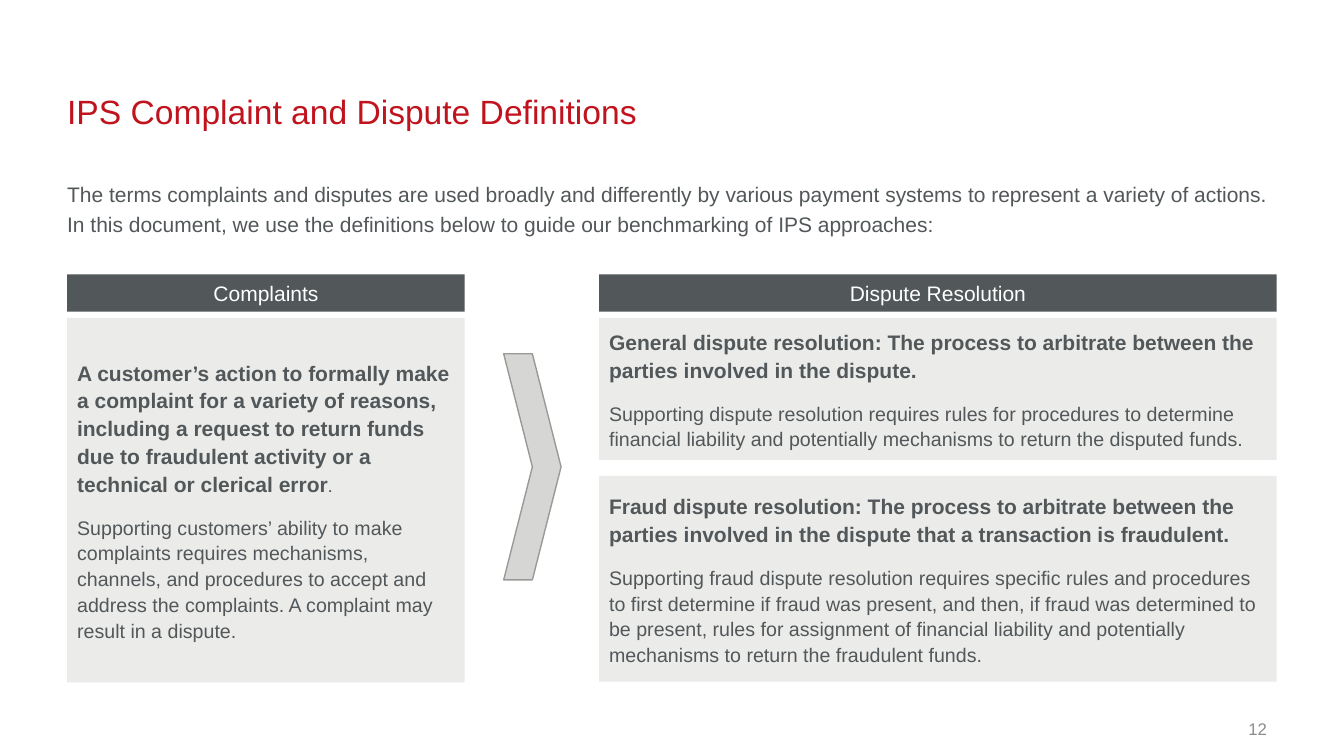
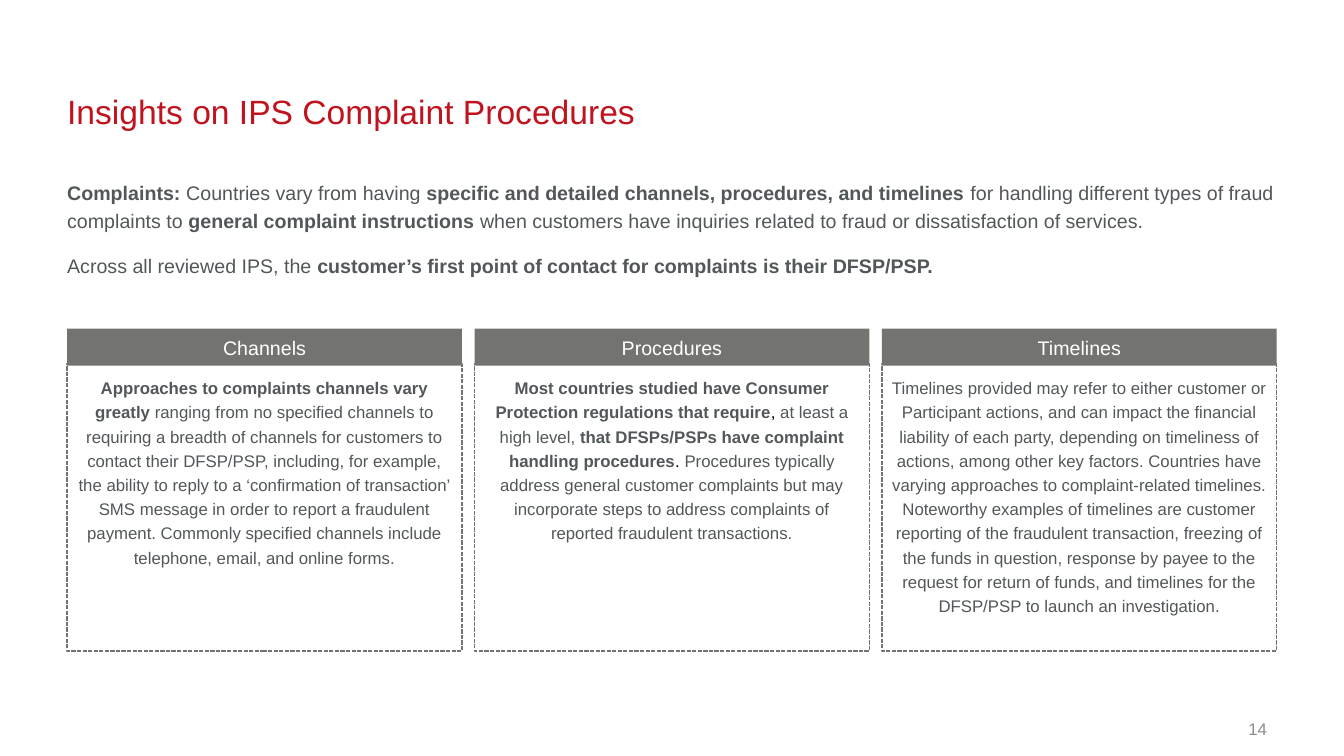
from pptx import Presentation
from pptx.dml.color import RGBColor
from pptx.enum.dml import MSO_LINE_DASH_STYLE as Dash
from pptx.enum.shapes import MSO_SHAPE as Shape
from pptx.enum.text import MSO_ANCHOR as Anchor, MSO_AUTO_SIZE as AutoSize, PP_ALIGN as Align
from pptx.util import Pt

RED = RGBColor(0xC1, 0x13, 0x1E)
SLATE = RGBColor(0x52, 0x57, 0x59)
GRAY = RGBColor(0x73, 0x73, 0x70)
PANEL = RGBColor(0xEB, 0xEB, 0xEA)
ARROW_FILL = RGBColor(0xD6, 0xD6, 0xD5)
ARROW_LINE = RGBColor(0x99, 0x99, 0x96)
NUMBER_GRAY = RGBColor(0x8C, 0x8C, 0x8C)
WHITE = RGBColor(0xFF, 0xFF, 0xFF)
BLACK = RGBColor(0, 0, 0)

FONT = "Arial"
LEFT, WIDTH = 48, 864
RIGHT = LEFT + WIDTH
INTRO_TOP = 126
HEADER_HEIGHT = 26.6
INSET = 7.2

# A paragraph is (size, runs); a run is (text, style).
BOLD = {"bold": True}
PLAIN = {}
BLACK_TEXT = {"color": BLACK}
CABIN = {"name": "Cabin"}

DEFINITIONS_INTRO = [(15, [(
    "The terms complaints and disputes are used broadly and differently by various payment systems "
    "to represent a variety of actions. In this document, we use the definitions below to guide our "
    "benchmarking of IPS approaches:", PLAIN)])]
COMPLAINTS = [
    (15, [("A customer’s action to formally make a complaint for a variety of reasons, including a "
           "request to return funds due to fraudulent activity or a technical or clerical error", BOLD),
          (".", CABIN)]),
    (14, [("Supporting customers’ ability to make complaints requires mechanisms, channels, and "
           "procedures to accept and address the complaints. A complaint may result in a dispute.",
           PLAIN)]),
]
GENERAL_DISPUTES = [
    (15, [("General dispute resolution: The process to arbitrate between the parties involved in "
           "the dispute.", BOLD)]),
    (14, [("Supporting dispute resolution requires rules for procedures to determine financial "
           "liability and potentially mechanisms to return the disputed funds.", PLAIN)]),
]
FRAUD_DISPUTES = [
    (15, [("Fraud dispute resolution: The process to arbitrate between the parties involved in the "
           "dispute that a transaction is fraudulent.", BOLD)]),
    (14, [("Supporting fraud dispute resolution requires specific rules and procedures to first "
           "determine if fraud was present, and then, if fraud was determined to be present, rules "
           "for assignment of financial liability and potentially mechanisms to return the "
           "fraudulent funds.", PLAIN)]),
]
# Header, left, width, and panels as (top, height, paragraphs)
DEFINITION_COLUMNS = [
    ("Complaints", LEFT, 284, [(227, 260.5, COMPLAINTS)]),
    ("Dispute Resolution", 428, RIGHT - 428,
     [(227, 101.5, GENERAL_DISPUTES), (340, 147, FRAUD_DISPUTES)]),
]

INSIGHTS_INTRO = [
    (14, [("Complaints: ", BOLD),
          ("Countries vary from having ", PLAIN),
          ("specific and detailed channels, procedures, and timelines ", BOLD),
          ("for handling different types of fraud complaints to ", PLAIN),
          ("general complaint instructions ", BOLD),
          ("when customers have inquiries related to fraud or dissatisfaction of services.", PLAIN)]),
    (14, [("Across all reviewed IPS, the ", PLAIN),
          ("customer’s first point of contact for complaints is their DFSP/PSP.", BOLD)]),
]
INSIGHT_CARDS = [
    ("Channels", [
        ("Approaches to complaints channels vary greatly ", BOLD),
        ("ranging from no specified channels to requiring a breadth of channels for customers to "
         "contact their DFSP/PSP, including, for example, the ability to reply to a ‘confirmation of "
         "transaction’ SMS message in order to report a fraudulent payment. Commonly specified "
         "channels include telephone, email, and online forms.", PLAIN)]),
    ("Procedures", [
        ("Most countries studied have Consumer Protection regulations that require", BOLD),
        (", ", BLACK_TEXT),
        ("at least a high level, ", PLAIN),
        ("that DFSPs/PSPs have complaint handling procedures", BOLD),
        (". ", BLACK_TEXT),
        ("Procedures typically address general customer complaints but may incorporate steps to "
         "address complaints of reported fraudulent transactions.", PLAIN)]),
    ("Timelines", [
        ("Timelines provided may refer to either customer or Participant actions, and can impact the "
         "financial liability of each party, depending on timeliness of actions, among other key "
         "factors. Countries have varying approaches to complaint-related timelines. Noteworthy "
         "examples of timelines are customer reporting of the fraudulent transaction, freezing of "
         "the funds in question, response by payee to the request for return of funds, and timelines "
         "for the DFSP/PSP to launch an investigation.", PLAIN)]),
]


def style_font(font, size, color=SLATE, bold=False, name=FONT):
    font.size, font.bold, font.name = Pt(size), bold, name
    font.color.rgb = color


def set_frame(text_frame, inset=0, anchor=Anchor.TOP):
    text_frame.word_wrap = True
    text_frame.auto_size = AutoSize.NONE
    text_frame.vertical_anchor = anchor
    text_frame.margin_left = text_frame.margin_right = Pt(inset)
    text_frame.margin_top = text_frame.margin_bottom = Pt(inset)


def write(text_frame, paragraphs, line_spacing=1.0, gap=0, align=Align.LEFT):
    for index, (size, runs) in enumerate(paragraphs):
        paragraph = text_frame.add_paragraph() if index else text_frame.paragraphs[0]
        paragraph.alignment = align
        paragraph.line_spacing = line_spacing
        paragraph.space_before = Pt(gap if index else 0)
        for text, style in runs:
            run = paragraph.add_run()
            run.text = text
            style_font(run.font, size, **style)


def add_text(slide, box, paragraphs, anchor=Anchor.TOP, **layout):
    text_frame = slide.shapes.add_textbox(*map(Pt, box)).text_frame
    set_frame(text_frame, anchor=anchor)
    write(text_frame, paragraphs, **layout)


def add_box(slide, box, fill=None, line=None, kind=Shape.RECTANGLE):
    shape = slide.shapes.add_shape(kind, *map(Pt, box))
    shape.shadow.inherit = False
    if fill is None:
        shape.fill.background()
    else:
        shape.fill.solid()
        shape.fill.fore_color.rgb = fill
    if line is None:
        shape.line.fill.background()
    else:
        shape.line.color.rgb = line
        shape.line.width = Pt(1)
    return shape


def add_panel(slide, box, paragraphs, fill=None, line=None, anchor=Anchor.MIDDLE, **layout):
    shape = add_box(slide, box, fill, line)
    set_frame(shape.text_frame, INSET, anchor)
    write(shape.text_frame, paragraphs, **layout)
    return shape


def add_header(slide, text, left, top, width, fill, size):
    add_panel(slide, (left, top, width, HEADER_HEIGHT), [(size, [(text, {"color": WHITE})])],
              fill=fill, align=Align.CENTER)


def add_titled_slide(presentation, title_text, number):
    slide = presentation.slides.add_slide(presentation.slide_layouts[5])
    title = slide.shapes.title
    title.left, title.top, title.width, title.height = map(Pt, (LEFT, 46, WIDTH, 66))
    set_frame(title.text_frame, anchor=Anchor.MIDDLE)
    write(title.text_frame, [(24, [(title_text, {"color": RED})])])
    add_text(slide, (865, 512.6, 40, 16.6), [(12, [(str(number), {"color": NUMBER_GRAY})])],
             anchor=Anchor.MIDDLE, align=Align.RIGHT)
    return slide


def build_definitions(presentation):
    slide = add_titled_slide(presentation, "IPS Complaint and Dispute Definitions", 12)
    add_text(slide, (LEFT, INTRO_TOP, WIDTH, 50), DEFINITIONS_INTRO, line_spacing=1.2)
    for header, left, width, panels in DEFINITION_COLUMNS:
        add_header(slide, header, left, 196, width, SLATE, 15)
        for top, height, paragraphs in panels:
            add_panel(slide, (left, top, width, height), paragraphs, fill=PANEL,
                      line_spacing=1.1, gap=12)
    add_box(slide, (359.8, 252.7, 41, 161.5), ARROW_FILL, ARROW_LINE, Shape.CHEVRON)


def build_insights(presentation):
    slide = add_titled_slide(presentation, "Insights on IPS Complaint Procedures", 14)
    add_text(slide, (LEFT, INTRO_TOP, WIDTH, 100), INSIGHTS_INTRO, line_spacing=1.2, gap=12)
    gap, count = 9, len(INSIGHT_CARDS)
    width = (WIDTH - gap * (count - 1)) / count
    for index, (header, runs) in enumerate(INSIGHT_CARDS):
        left = LEFT + index * (width + gap)
        card = add_panel(slide, (left, 260, width, 205), [(12, runs)], line=GRAY,
                         anchor=Anchor.TOP, line_spacing=1.2, align=Align.CENTER)
        card.line.dash_style = Dash.SQUARE_DOT
        add_header(slide, header, left, 234.7, width, GRAY, 14)


def main():
    presentation = Presentation()
    presentation.slide_width, presentation.slide_height = Pt(960), Pt(540)
    build_definitions(presentation)
    build_insights(presentation)
    presentation.save("out.pptx")


if __name__ == "__main__":
    main()
